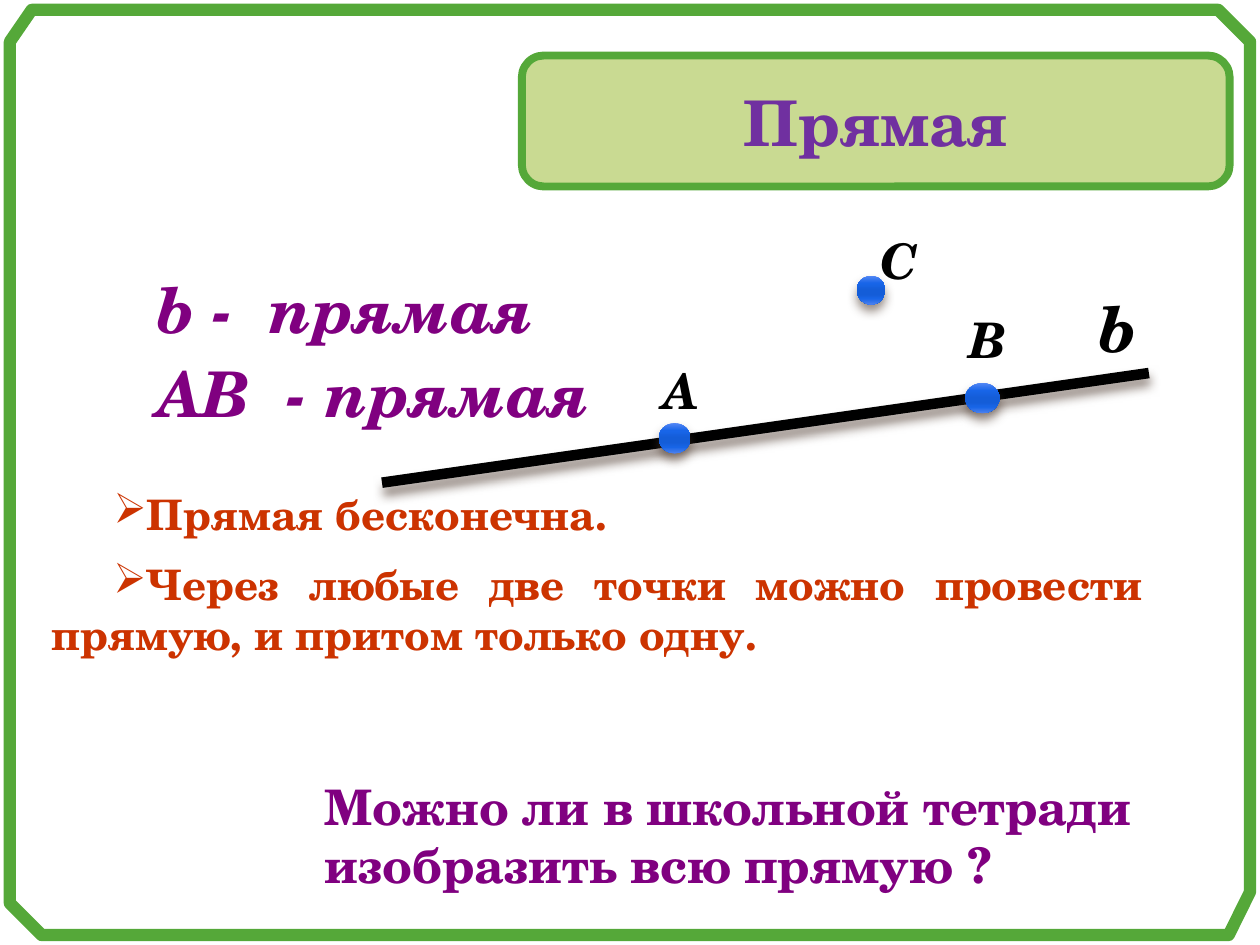
from lxml.etree import SubElement
from pptx import Presentation
from pptx.dml.color import RGBColor
from pptx.enum.shapes import MSO_CONNECTOR, MSO_SHAPE
from pptx.enum.text import MSO_ANCHOR, PP_ALIGN
from pptx.oxml.ns import qn
from pptx.util import Cm, Pt

FONT = "TeX Gyre Schola"
COLORS = {
    "green": "55A839", "panel": "C9DA92", "title": "7030A0", "purple": "800080",
    "red": "CC3300", "black": "000000", "shadow": "4E3B30",
}
DOT_STOPS = [(0, "5588F5"), (25, "1865E8"), (50, "145DD8"),
             (65, "145DD8"), (80, "1865E7"), (100, "4C81EF")]

# Content: lengths in cm, boxes as left, top, width, height
TITLE = "Прямая"
TITLE_BOX = (10.52, 1.12, 14.27, 2.64)
FRAME = [(0.2, 0.84), (0.2, 18.21), (0.84, 18.85), (24.77, 18.85), (25.2, 17.98),
         (25.2, 0.84), (24.56, 0.2), (0.64, 0.2)]
LINE = (7.7, 9.73, 23.16, 7.52)
DOTS = [(17.27, 5.56, 0.58, 0.58), (13.28, 8.53, 0.64, 0.61), (19.46, 7.72, 0.69, 0.61)]
RULES = ["Прямая бесконечна.",
         "Через любые две точки можно провести прямую, и притом только одну."]
# box, paragraphs, size, colour, italic, space between paragraphs
TEXTS = [
    ((17.5, 4.52, 1.27, 1.45), ["С"], 28, "black", True, 0),
    ((13.11, 7.14, 1.27, 1.45), ["А"], 28, "black", True, 0),
    ((19.3, 6.12, 1.27, 1.45), ["В"], 28, "black", True, 0),
    ((21.89, 5.72, 1.27, 1.78), ["b"], 36, "black", True, 0),
    ((2.9, 5.33, 9.78, 3.56), ["b -  прямая", "АВ  - прямая"], 36, "purple", True, 5),
    ((6.3, 15.52, 17.2, 2.64), ["Можно ли в школьной тетради изобразить всю прямую ?"],
     28, "purple", False, 0),
]


def color(name):
    return RGBColor.from_string(COLORS[name])


def lengths(values):
    return [Cm(value) for value in values]


def add_span(para, text, size, color_name, italic=False):
    span = para.add_run()
    span.text = text
    span.font.name = FONT
    span.font.size = Pt(size)
    span.font.bold = True
    span.font.italic = italic
    span.font.color.rgb = color(color_name)


def add_text(page, position, texts, size, color_name, italic, gap, bullet=None):
    box = page.shapes.add_textbox(*lengths(position))
    frame = box.text_frame
    frame.word_wrap = True
    for index, text in enumerate(texts):
        para = frame.paragraphs[0] if index == 0 else frame.add_paragraph()
        if bullet:
            properties = para._p.get_or_add_pPr()
            properties.set("marL", "0")
            properties.set("indent", str(Cm(1.25)))
            SubElement(properties, qn("a:buChar"), char=bullet)
        if index:
            para.space_before = Pt(gap)
        add_span(para, text, size, color_name, italic)
    return frame


def add_shadow(shape):
    effects = SubElement(shape._element.spPr, qn("a:effectLst"))
    shadow = SubElement(effects, qn("a:outerShdw"), blurRad=str(Pt(6)), dist=str(Pt(4)),
                        dir="5400000", rotWithShape="0")
    tint = SubElement(shadow, qn("a:srgbClr"), val=COLORS["shadow"])
    SubElement(tint, qn("a:alpha"), val="60000")


def add_dot(page, position):
    dot = page.shapes.add_shape(MSO_SHAPE.OVAL, *lengths(position))
    dot.fill.gradient()
    dot.fill.gradient_angle = 270
    stops = dot._element.spPr.find(qn("a:gradFill")).find(qn("a:gsLst"))
    for stop in list(stops):
        stops.remove(stop)
    for percent, value in DOT_STOPS:
        stop = SubElement(stops, qn("a:gs"), pos=str(percent * 1000))
        SubElement(stop, qn("a:srgbClr"), val=value)
    dot.line.fill.background()
    add_shadow(dot)


def add_title(page):
    panel = page.shapes.add_shape(MSO_SHAPE.ROUNDED_RECTANGLE, *lengths(TITLE_BOX))
    panel.shadow.inherit = False
    panel.fill.solid()
    panel.fill.fore_color.rgb = color("panel")
    panel.line.color.rgb = color("green")
    panel.line.width = Pt(4.5)
    title = page.shapes.title
    title.left, title.top, title.width, title.height = lengths(TITLE_BOX)
    title.text_frame.vertical_anchor = MSO_ANCHOR.MIDDLE
    para = title.text_frame.paragraphs[0]
    para.alignment = PP_ALIGN.CENTER
    add_span(para, TITLE, 36, "title")
    panel._element.addnext(title._element)  # title text in front of its panel


def add_frame(page):
    points = [lengths(point) for point in FRAME]
    builder = page.shapes.build_freeform(*points[0])
    builder.add_line_segments(points[1:], close=True)
    border = builder.convert_to_shape()
    border.shadow.inherit = False
    border.fill.background()
    border.line.color.rgb = color("green")
    border.line.width = Pt(7)


def main():
    deck = Presentation()
    deck.slide_width, deck.slide_height = Cm(25.4), Cm(19.05)
    page = deck.slides.add_slide(deck.slide_layouts[5])

    # Properties of a straight line
    rules = add_text(page, (0.79, 9.73, 22.5, 3.84), RULES, 24, "red", False, 11, "➢")
    rules.paragraphs[1].alignment = PP_ALIGN.JUSTIFY

    # Drawing: line b with its points
    line = page.shapes.add_connector(MSO_CONNECTOR.STRAIGHT, *lengths(LINE))
    line.line.color.rgb = color("black")
    line.line.width = Pt(6)
    add_shadow(line)
    for position in DOTS:
        add_dot(page, position)

    # Labels, notation and question
    for text in TEXTS:
        add_text(page, *text)

    add_title(page)
    add_frame(page)
    deck.save("out.pptx")


if __name__ == "__main__":
    main()
